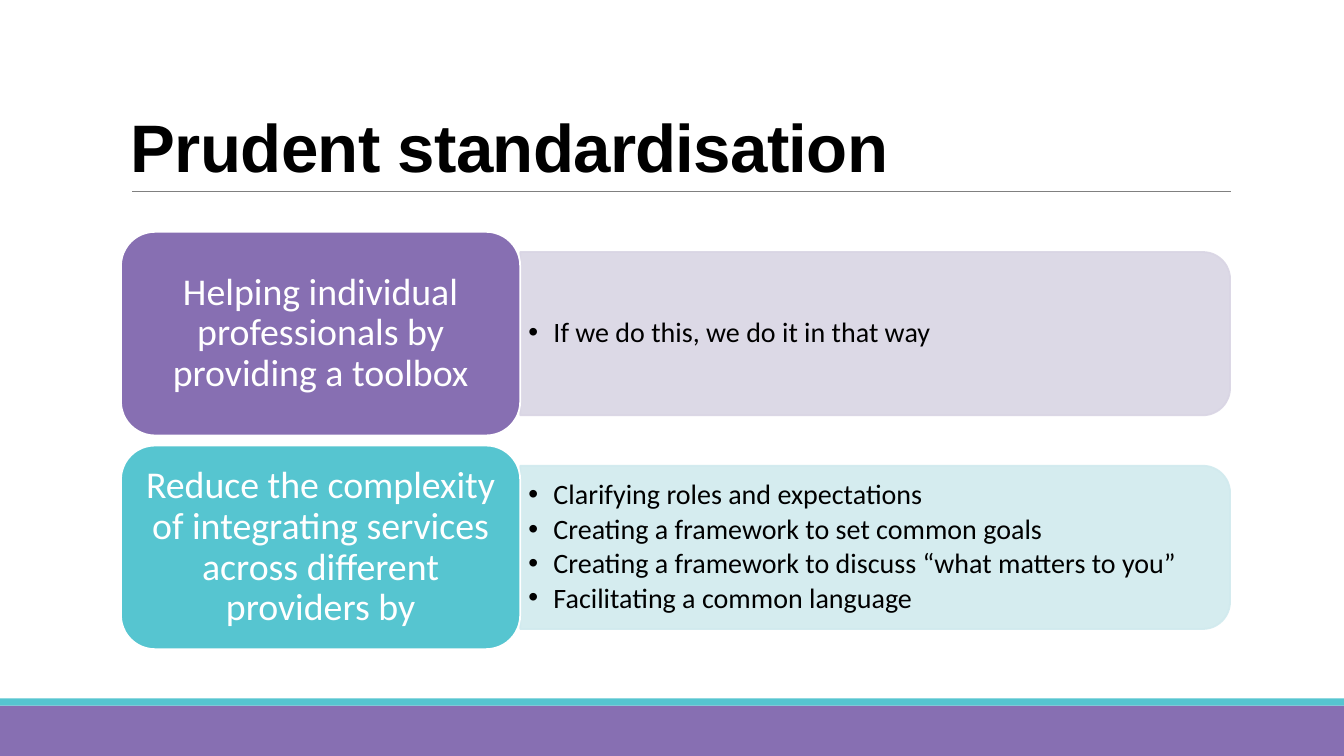
import pptx
import pptx.util
import pptx.dml.color
import pptx.enum.shapes
import pptx.enum.text
import pptx.oxml
import pptx.oxml.ns

Inches = pptx.util.Inches
Pt = pptx.util.Pt
SHAPE = pptx.enum.shapes.MSO_SHAPE
ALIGN = pptx.enum.text.PP_ALIGN
ANCHOR = pptx.enum.text.MSO_ANCHOR
qn = pptx.oxml.ns.qn

TITLE = "Prudent standardisation"
PURPLE, TEAL = "876FB2", "56C5D0"
ROWS = [
    ("Helping individual professionals by providing a toolbox", PURPLE, "D9D5E4",
     ["If we do this, we do it in that way"]),
    ("Reduce the complexity of integrating services across different providers by",
     TEAL, "D1EAEE",
     ["Clarifying roles and expectations",
      "Creating a framework to set common goals",
      "Creating a framework to discuss “what matters to you”",
      "Facilitating a common language"]),
]
LEFT, TOP, PITCH = 1.2, 2.3, 2.12
LABEL_W, LABEL_H = 3.96, 2.02
PANEL_W, PANEL_H = 7.04, 1.62
TEXT_W, TEXT_H = 6.96, 1.46


def rgb(color):
    return pptx.dml.color.RGBColor.from_string(color)


def add_child(parent, tag, **attrs):
    child = parent.makeelement(qn(tag), attrs)
    parent.append(child)
    return child


def add_shape(kind, x, y, w, h, fill, line=None, alpha=None):
    sp = s.shapes.add_shape(kind, Inches(x), Inches(y), Inches(w), Inches(h))
    sp.shadow.inherit = False
    sp.fill.solid()
    sp.fill.fore_color.rgb = rgb(fill)
    if line:
        sp.line.color.rgb = rgb(line)
        sp.line.width = Pt(1.25)
    else:
        sp.line.fill.background()
    if alpha:
        for color in sp._element.spPr.iter(qn("a:srgbClr")):
            add_child(color, "a:alpha", val=str(alpha * 1000))
    return sp


def add_box(x, y, w, h):
    return s.shapes.add_textbox(Inches(x), Inches(y), Inches(w), Inches(h))


def write(sp, lines, size, color="000000", font="Calibri", bold=False, align=ALIGN.LEFT,
          anchor=ANCHOR.MIDDLE, inset=(0.1, 0.05), spacing=0.9, after=0,
          bullet=False, tracking=None):
    tf = sp.text_frame
    tf.word_wrap = True
    tf.vertical_anchor = anchor
    tf.margin_left = tf.margin_right = Inches(inset[0])
    tf.margin_top = tf.margin_bottom = Inches(inset[1])
    for i, line in enumerate(lines):
        p = tf.add_paragraph() if i else tf.paragraphs[0]
        p.alignment = align
        p.line_spacing = spacing
        p.space_after = Pt(after)
        if bullet:
            pPr = p._p.get_or_add_pPr()
            pPr.set("marL", str(Inches(0.25)))
            pPr.set("indent", str(-Inches(0.25)))
            add_child(pPr, "a:buFont", typeface="Arial")
            add_child(pPr, "a:buChar", char="•")
        r = p.add_run()
        r.text = line
        r.font.name = font
        r.font.size = Pt(size)
        r.font.bold = bold
        r.font.color.rgb = rgb(color)
        if tracking:
            r._r.get_or_add_rPr().set("spc", str(tracking))


prs = pptx.Presentation()
prs.slide_width, prs.slide_height = Inches(13.33), Inches(7.5)
s = prs.slides.add_slide(prs.slide_layouts[6])

add_shape(SHAPE.RECTANGLE, 0, 7, 13.33, 0.5, PURPLE)
add_shape(SHAPE.RECTANGLE, 0, 6.93, 13.33, 0.07, TEAL)
rule = s.shapes.add_connector(pptx.enum.shapes.MSO_CONNECTOR.STRAIGHT,
                              Inches(1.31), Inches(1.9), Inches(12.21), Inches(1.9))
rule.line.color.rgb = rgb("808080")
rule.line.width = Pt(0.5)
add_child(rule._element.spPr, "a:effectLst")

write(add_box(LEFT, 0.31, 11, 1.59), [TITLE], 48, font="Arial", bold=True,
      anchor=ANCHOR.BOTTOM, spacing=0.85, tracking=-50)

panel_x = LEFT + LABEL_W
for i, (label, strong, pale, points) in enumerate(ROWS):
    y = TOP + i * PITCH
    mid = y + LABEL_H / 2
    panel = add_shape(SHAPE.ROUND_2_SAME_RECTANGLE, panel_x + (PANEL_W - PANEL_H) / 2,
                      mid - PANEL_W / 2, PANEL_H, PANEL_W, pale, line=pale, alpha=90)
    panel.rotation = 90
    write(add_box(panel_x, mid - TEXT_H / 2, TEXT_W, TEXT_H), points, 20,
          inset=(0.08, 0.04), after=3, bullet=True)
    box = add_shape(SHAPE.ROUNDED_RECTANGLE, LEFT, y, LABEL_W, LABEL_H, strong, line="FFFFFF")
    write(box, [label], 27, color="FFFFFF", align=ALIGN.CENTER, inset=(0.11, 0.06))

prs.save("out.pptx")
